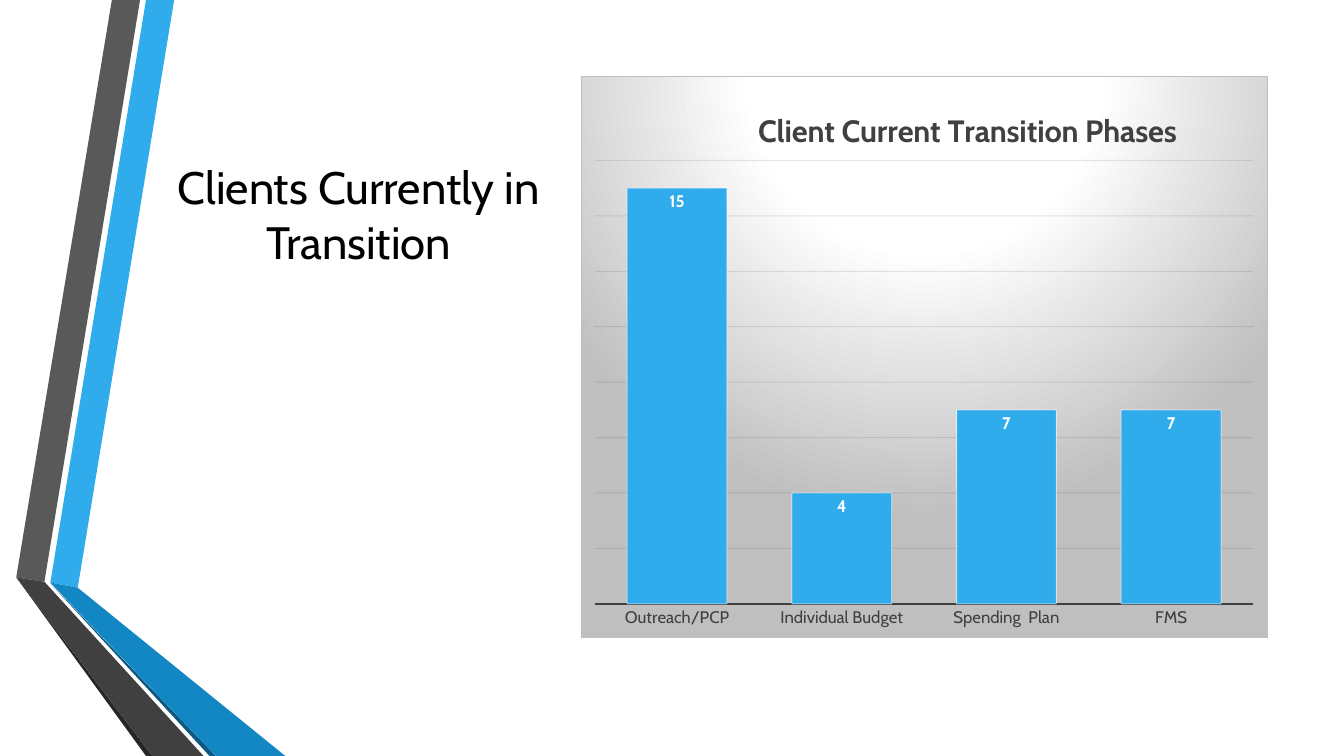
import pptx
import pptx.util
import pptx.dml.color
import pptx.chart.data
import pptx.enum.chart
import pptx.enum.text
import pptx.oxml
import pptx.oxml.ns
import lxml.etree

Cm = pptx.util.Cm
Pt = pptx.util.Pt
RGB = pptx.dml.color.RGBColor
qn = pptx.oxml.ns.qn

BLACK = RGB(0x00, 0x00, 0x00)
WHITE = RGB(0xFF, 0xFF, 0xFF)
BLUE = RGB(0x30, 0xAC, 0xEC)
DEEP = RGB(0x12, 0x87, 0xC3)
NAVY = RGB(0x0C, 0x5A, 0x82)
GREY = RGB(0x59, 0x59, 0x59)
DARK = RGB(0x40, 0x40, 0x40)
SHADE = RGB(0x26, 0x26, 0x26)
GRID = RGB(0x0D, 0x0D, 0x0D)
SILVER = RGB(0xBF, 0xBF, 0xBF)
FONT = "Cabin"

BANDS = [
    (BLUE, [(0.86, 14.68), (1.55, 14.81), (3.98, 0), (3.27, 0)]),
    (GREY, [(3.12, 0), (2.41, 0), (0, 14.55), (0.71, 14.66)]),
    (SHADE, [(0, 14.55), (3.27, 19.05), (3.43, 19.05)]),
    (NAVY, [(0.86, 14.7), (4.87, 19.05), (5.03, 19.05)]),
    (DEEP, [(0.86, 14.68), (5.03, 19.05), (6.78, 19.05), (1.55, 14.81)]),
    (DARK, [(4.72, 19.05), (0.71, 14.66), (0, 14.55), (3.43, 19.05)]),
]
PHASES = [("Outreach/PCP", 15), ("Individual Budget", 4),
          ("Spending  Plan", 7), ("FMS", 7)]

BACK = f"""<c:spPr {pptx.oxml.ns.nsdecls("c", "a")}>
  <a:gradFill><a:gsLst>
    <a:gs pos="0"><a:srgbClr val="{WHITE}"/></a:gs>
    <a:gs pos="39000"><a:srgbClr val="{WHITE}"/></a:gs>
    <a:gs pos="100000"><a:srgbClr val="{SILVER}"/></a:gs>
  </a:gsLst><a:path path="circle">
    <a:fillToRect l="50000" t="-80000" r="50000" b="180000"/>
  </a:path></a:gradFill>
  <a:ln w="9525"><a:solidFill><a:srgbClr val="{SILVER}"/></a:solidFill></a:ln>
</c:spPr>"""


def style(font, size, tint, bold=False):
    font.name = FONT
    font.size = Pt(size)
    font.bold = bold
    font.color.rgb = tint


def stroke(line, tint, width, alpha=100):
    line.color.rgb = tint
    line.width = Pt(width)
    if alpha < 100:
        node = line.fill._xPr.find(".//" + qn("a:srgbClr"))
        lxml.etree.SubElement(node, qn("a:alpha"), val=str(alpha * 1000))


def place(part, index, **sides):
    frame = part.find(qn("c:layout"))
    if frame is None:
        frame = pptx.oxml.parse_xml(f'<c:layout {pptx.oxml.ns.nsdecls("c")}/>')
        part.insert(index, frame)
    manual = lxml.etree.SubElement(frame, qn("c:manualLayout"))
    if "w" in sides:
        lxml.etree.SubElement(manual, qn("c:layoutTarget"), val="inner")
    for mode in ("xMode", "yMode"):
        lxml.etree.SubElement(manual, qn("c:" + mode), val="edge")
    for side, share in sides.items():
        lxml.etree.SubElement(manual, qn("c:" + side), val=str(share))


def add_bands(slide, left, top):
    for tint, points in BANDS:
        spots = [(left + Cm(x), top + Cm(y)) for x, y in points]
        pen = slide.shapes.build_freeform(*spots[0])
        pen.add_line_segments(spots[1:], close=True)
        band = pen.convert_to_shape()
        band.shadow.inherit = False
        band.fill.solid()
        band.fill.fore_color.rgb = tint
        band.line.fill.background()


def add_head(slide, left, top, width, height):
    frame = slide.shapes.add_textbox(left, top, width, height).text_frame
    frame.word_wrap = True
    frame.vertical_anchor = pptx.enum.text.MSO_ANCHOR.BOTTOM
    frame.margin_bottom = Cm(1.5)
    line = frame.paragraphs[0]
    line.alignment = pptx.enum.text.PP_ALIGN.CENTER
    run = line.add_run()
    run.text = "Clients Currently in Transition"
    style(run.font, 32.4, BLACK)


def add_graph(slide, left, top, width, height):
    data = pptx.chart.data.CategoryChartData()
    data.categories = [name for name, count in PHASES]
    data.add_series("Series 1", [count for name, count in PHASES])
    kind = pptx.enum.chart.XL_CHART_TYPE.COLUMN_CLUSTERED
    chart = slide.shapes.add_chart(kind, left, top, width, height, data).chart
    style(chart.font, 10, BLACK)
    chart.has_legend = False
    chart._chartSpace.chart.addnext(pptx.oxml.parse_xml(BACK))

    run = chart.chart_title.text_frame.paragraphs[0].add_run()
    run.text = "Client Current Transition Phases"
    style(run.font, 22, DARK, True)
    place(chart.chart_title._element, 1, x=0.25, y=0.05)
    place(chart._chartSpace.chart.plotArea, 0, x=0.02, y=0.15, w=0.96, h=0.79)

    base = chart.category_axis
    base.major_tick_mark = pptx.enum.chart.XL_TICK_MARK.NONE
    style(base.tick_labels.font, 12, DARK)
    stroke(base.format.line, DARK, 1.5)
    scale = chart.value_axis
    scale.visible = False
    scale.minimum_scale = 0
    scale.maximum_scale = 16
    scale.major_unit = 2
    scale.has_major_gridlines = True
    stroke(scale.major_gridlines.format.line, GRID, 0.75, 10)

    plot = chart.plots[0]
    plot.gap_width = 65
    plot.vary_by_categories = False
    bars = plot.series[0]
    bars.format.fill.solid()
    bars.format.fill.fore_color.rgb = BLUE
    stroke(bars.format.line, WHITE, 0.75, 50)
    labels = bars.data_labels
    labels.show_value = True
    labels.position = pptx.enum.chart.XL_LABEL_POSITION.INSIDE_END
    style(labels.font, 12, WHITE, True)


def main():
    deck = pptx.Presentation()
    deck.slide_width = Cm(33.87)
    deck.slide_height = Cm(19.05)
    slide = deck.slides.add_slide(deck.slide_layouts[6])
    add_bands(slide, Cm(0.41), Cm(0))
    add_head(slide, Cm(4.11), Cm(4.45), Cm(9.86), Cm(3.81))
    add_graph(slide, Cm(14.63), Cm(1.91), Cm(17.32), Cm(14.17))
    deck.save("out.pptx")


if __name__ == "__main__":
    main()
